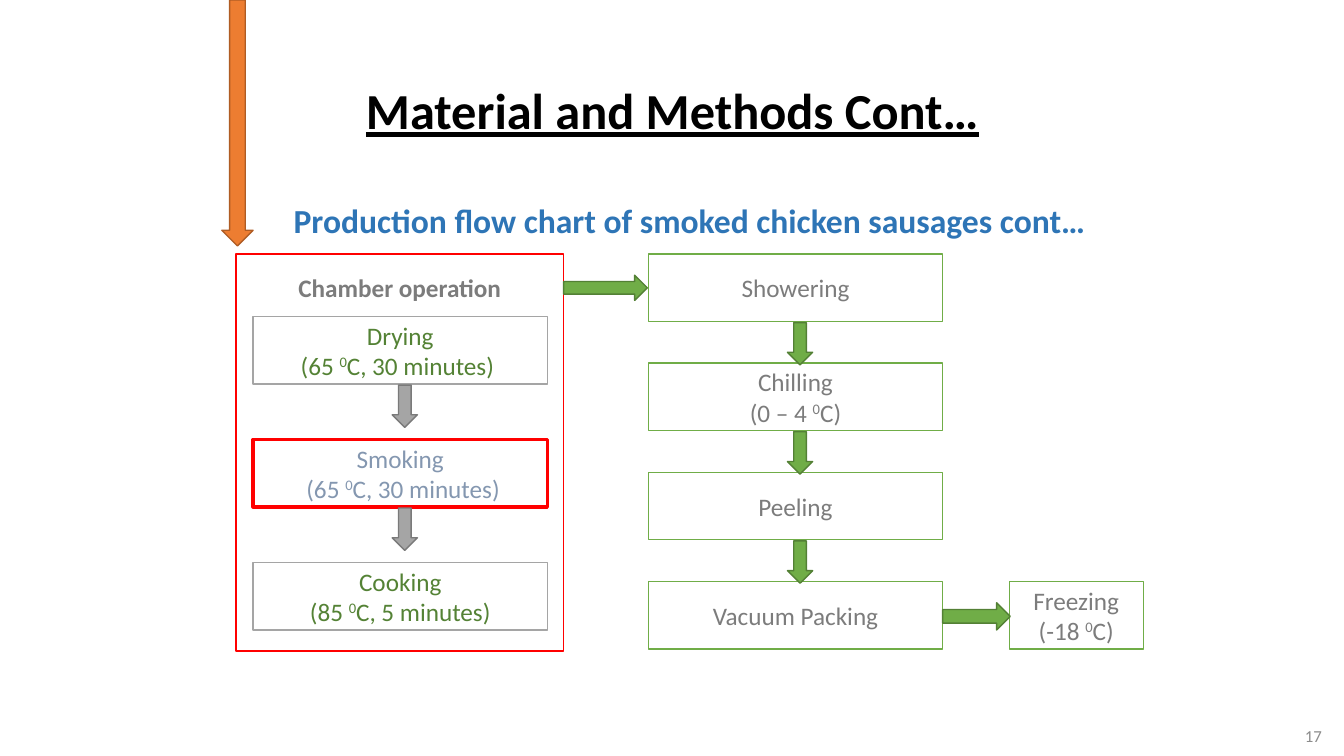
from typing import NamedTuple

from pptx import Presentation
from pptx.dml.color import RGBColor as RGB
from pptx.enum.shapes import MSO_SHAPE as Kind
from pptx.enum.text import MSO_ANCHOR as Anchor, MSO_AUTO_SIZE as Auto, PP_ALIGN as Align
from pptx.util import Inches, Pt

BLACK = RGB(0x00, 0x00, 0x00)
WHITE = RGB(0xFF, 0xFF, 0xFF)
RED = RGB(0xFF, 0x00, 0x00)
BLUE = RGB(0x2E, 0x75, 0xB6)
SLATE = RGB(0x84, 0x97, 0xB0)
GREY = RGB(0xA5, 0xA5, 0xA5)
DIM = RGB(0x7A, 0x7A, 0x7A)
TEXT = RGB(0x7C, 0x7C, 0x7C)
PALE = RGB(0x8C, 0x8C, 0x8C)
GREEN = RGB(0x70, 0xAD, 0x47)
MOSS = RGB(0x53, 0x80, 0x35)
LEAF = RGB(0x54, 0x82, 0x35)
AMBER = RGB(0xED, 0x7D, 0x31)
RUST = RGB(0xAF, 0x5C, 0x24)

# Flow grid, in inches: step size, column lefts, row tops and pitches
WIDE, HIGH = 2.92, 0.67
INNER, MAIN, LAST = 2.51, 6.43, 10.01
TOP, GAP = 2.52, 1.083
FIRST, STEP = 3.14, 1.22
SHIFT, THIN, LONG = 1.38, 0.25, 0.42


class Box(NamedTuple):
    x: float
    y: float
    w: float
    h: float


class Stage(NamedTuple):
    text: str
    ink: RGB = TEXT
    edge: RGB = GREEN
    line: float = 1


CHAMBER = [
    Stage("Drying\n(65 ^0^C, 30 minutes) ", LEAF, GREY),
    Stage("Smoking\n (65 ^0^C, 30 minutes)", SLATE, RED, 2.25),
    Stage("Cooking\n(85 ^0^C, 5 minutes)", LEAF, GREY),
]
FINISH = [
    Stage("Showering"),
    Stage("Chilling\n(0 – 4 ^0^C)"),
    Stage("Peeling"),
    Stage("Vacuum Packing"),
]

deck = Presentation()
deck.slide_width, deck.slide_height = Inches(13.33), Inches(7.5)
slide = deck.slides.add_slide(deck.slide_layouts[5])
shapes = slide.shapes


def write(frame, text: str, *, size: float = 18, ink: RGB = TEXT, bold: bool = False,
          under: bool = False, align: Align = Align.CENTER,
          anchor: Anchor = Anchor.MIDDLE, space: float = 1.0) -> None:
    """Fill a text frame; text between ^ marks is raised."""
    frame.word_wrap = True
    frame.auto_size = Auto.NONE
    frame.vertical_anchor = anchor
    for i, line in enumerate(text.split("\n")):
        para = frame.add_paragraph() if i else frame.paragraphs[0]
        para.alignment, para.line_spacing = align, space
        for j, part in enumerate(line.split("^")):
            run = para.add_run()
            run.text = part
            font = run.font
            font.name, font.size = "Calibri", Pt(size)
            font.bold, font.underline = bold, under
            font.color.rgb = ink
            if j % 2:
                run._r.get_or_add_rPr().set("baseline", "30000")


def label(box: Box, text: str, **form) -> None:
    write(shapes.add_textbox(*map(Inches, box)).text_frame, text, **form)


def draw(kind: Kind, box: Box, fill: RGB, edge: RGB, line: float = 1):
    shape = shapes.add_shape(kind, *map(Inches, box))
    shape.shadow.inherit = False
    shape.fill.solid()
    shape.fill.fore_color.rgb = fill
    shape.line.color.rgb = edge
    shape.line.width = Pt(line)
    return shape


def place(stage: Stage, x: float, y: float, w: float = WIDE) -> None:
    shape = draw(Kind.RECTANGLE, Box(x, y, w, HIGH), WHITE, stage.edge, stage.line)
    write(shape.text_frame, stage.text, ink=stage.ink)


def chain(steps: list[Stage], x: float, top: float, pitch: float,
          fill: RGB, edge: RGB) -> None:
    """Stack steps in a column with an arrow below all but the last."""
    for i, step in enumerate(steps):
        place(step, x, top + i * pitch)
    for i in range(len(steps) - 1):
        y = top + i * pitch + HIGH + 0.01
        draw(Kind.DOWN_ARROW, Box(x + SHIFT, y, THIN, LONG), fill, edge)


# Headings and page number
title = shapes.title
title.left, title.top, title.width, title.height = map(Inches, (0.92, 0.4, 11.5, 1.45))
write(title.text_frame, "Material and Methods Cont…", size=36, ink=BLACK,
      bold=True, under=True, space=0.9)
label(Box(10.21, 7.1, 3, 0.4), "17", size=12, ink=PALE, align=Align.RIGHT)
label(Box(2.34, 1.93, 9, 0.5), "Production flow chart of smoked chicken sausages cont…",
      size=24, ink=BLUE, bold=True, anchor=Anchor.TOP)

# Chamber frame with its three steps
frame = draw(Kind.RECTANGLE, Box(2.34, TOP, 3.25, 3.94), WHITE, RED)
frame.text_frame.margin_top = Inches(0.18)
write(frame.text_frame, "Chamber operation", bold=True, anchor=Anchor.TOP)
chain(CHAMBER, INNER, FIRST, STEP, GREY, DIM)

# Finishing steps and freezing
chain(FINISH, MAIN, TOP, GAP, GREEN, MOSS)
place(Stage("Freezing\n(-18 ^0^C)"), LAST, TOP + 3 * GAP, 1.33)

# Arrows into, between and out of the columns
draw(Kind.RIGHT_ARROW, Box(5.59, 2.73, 0.83, THIN), GREEN, MOSS)
draw(Kind.DOWN_ARROW, Box(2.2, 0, 0.31, 2.44), AMBER, RUST)
draw(Kind.RIGHT_ARROW, Box(MAIN + WIDE, 5.98, 0.67, 0.27), GREEN, MOSS)

deck.save("out.pptx")
